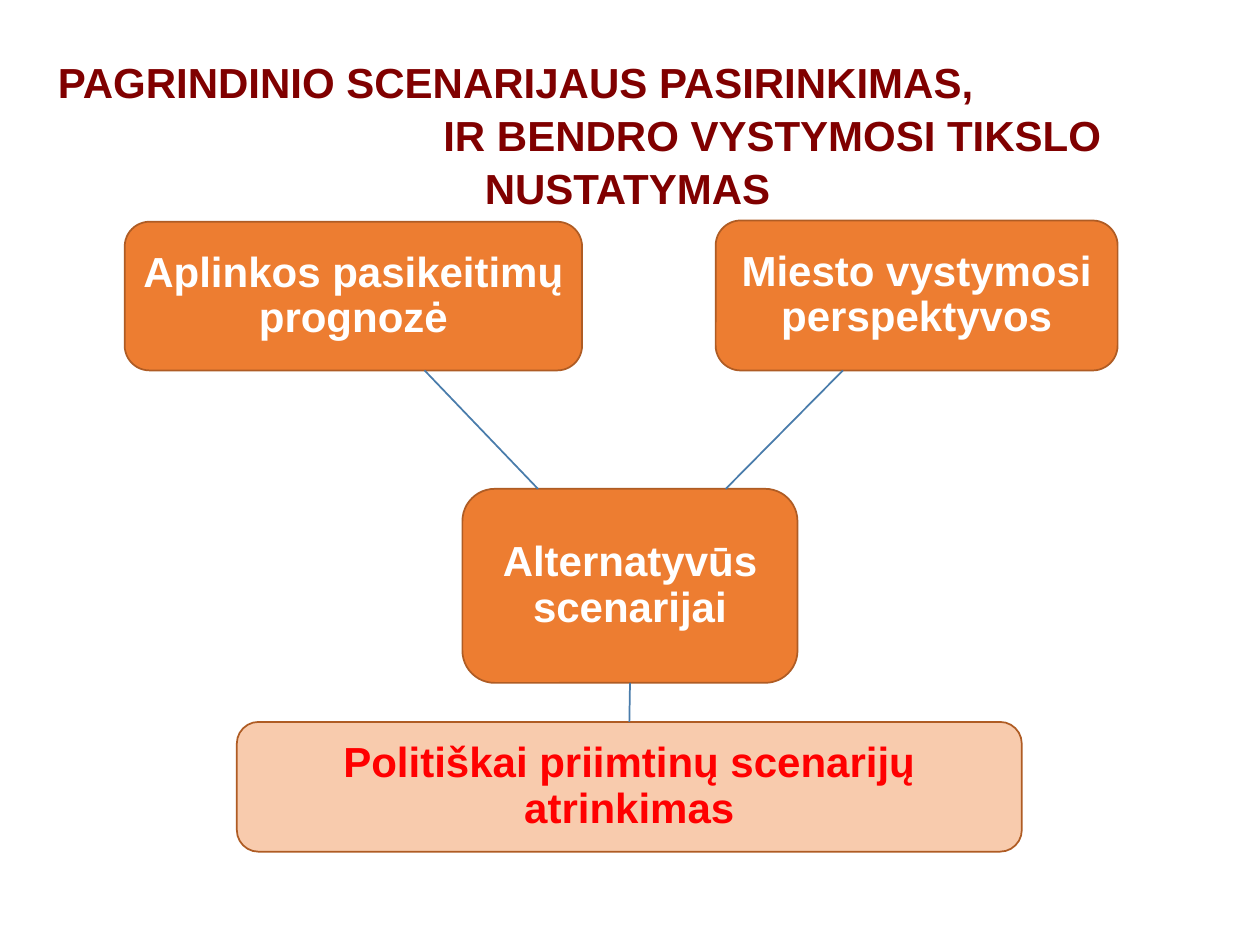
"""Build the slide on choosing the main scenario."""
from dataclasses import dataclass

from lxml import etree
from pptx import Presentation
from pptx import util as u
from pptx.dml.color import RGBColor
from pptx.enum import shapes, text
from pptx.oxml.ns import qn


@dataclass(frozen=True)
class Theme:
    """Colours, type and grid of the slide."""
    font: str = "Arial"
    size: float = 24
    line_width: float = 1
    title: str = "800000"
    step: str = "ED7D31"
    result: str = "F8CBAD"
    border: str = "AF5C24"
    link: str = "497CAB"
    on_step: str = "FFFFFF"
    on_result: str = "FF0000"
    cell: float = 0.1


THEME = Theme()


def grid(*cells):
    """Turn grid columns and rows into lengths."""
    return [u.Inches(cell * THEME.cell) for cell in cells]


def write(paragraph, words, *, color, align=text.PP_ALIGN.CENTER, spacing=0.9, indent=0):
    """Write bold words into a paragraph with the given format."""
    paragraph.alignment = align
    paragraph.line_spacing = spacing
    paragraph.space_before = u.Pt(0)
    if indent:
        paragraph._p.get_or_add_pPr().set("indent", str(grid(indent)[0]))
    run = paragraph.add_run()
    run.text = words
    run.font.name = THEME.font
    run.font.size = u.Pt(THEME.size)
    run.font.bold = True
    run.font.color.rgb = RGBColor.from_string(color)


def add_heading(slide):
    """Place the title, its second part shifted to the right."""
    heading = slide.shapes.title
    heading.left, heading.top, heading.width, heading.height = grid(3.6, 3.8, 92.4, 13)
    frame = heading.text_frame
    frame.word_wrap = True
    frame.auto_size = text.MSO_AUTO_SIZE.NONE
    frame.vertical_anchor = text.MSO_ANCHOR.TOP
    write(frame.paragraphs[0], "PAGRINDINIO SCENARIJAUS PASIRINKIMAS,",
          color=THEME.title, align=text.PP_ALIGN.LEFT, spacing=1.05)
    write(frame.add_paragraph(), "IR BENDRO VYSTYMOSI TIKSLO NUSTATYMAS",
          color=THEME.title, spacing=1.05, indent=23)


def add_stage(slide, words, cells, *, fill=THEME.step, color=THEME.on_step):
    """Add a rounded box with centred words."""
    stage = slide.shapes.add_shape(shapes.MSO_SHAPE.ROUNDED_RECTANGLE, *grid(*cells))
    stage.shadow.inherit = False
    stage.fill.solid()
    stage.fill.fore_color.rgb = RGBColor.from_string(fill)
    stage.line.color.rgb = RGBColor.from_string(THEME.border)
    stage.line.width = u.Pt(THEME.line_width)
    frame = stage.text_frame
    frame.word_wrap = True
    frame.vertical_anchor = text.MSO_ANCHOR.MIDDLE
    frame.margin_left = frame.margin_right = u.Inches(0.07)
    frame.margin_top = frame.margin_bottom = u.Inches(0.07)
    write(frame.paragraphs[0], words, color=color)
    return stage


def add_link(slide, cells=(0, 0, 0, 0)):
    """Add a thin straight line without a shadow."""
    link = slide.shapes.add_connector(shapes.MSO_CONNECTOR.STRAIGHT, *grid(*cells))
    link.line.color.rgb = RGBColor.from_string(THEME.link)
    link.line.width = u.Pt(THEME.line_width)
    etree.SubElement(link._element.spPr, qn("a:effectLst"))
    return link


def main():
    """Build and save the slide."""
    deck = Presentation()
    deck.slide_width, deck.slide_height = grid(100, 75)
    slide = deck.slides.add_slide(deck.slide_layouts.get_by_name("Title Only"))
    add_heading(slide)

    alternatives = add_stage(slide, "Alternatyvūs scenarijai", (36.7, 38.8, 26.6, 15.4))
    add_stage(slide, "Aplinkos pasikeitimų prognozė", (9.9, 17.6, 36.3, 11.8))
    add_stage(slide, "Miesto vystymosi perspektyvos", (56.8, 17.5, 31.9, 11.9))
    selection = add_stage(slide, "Politiškai priimtinų scenarijų atrinkimas",
                          (18.8, 57.3, 62.3, 10.3),
                          fill=THEME.result, color=THEME.on_result)

    for lower, upper in ((42.7, 33.7), (57.6, 66.9)):
        add_link(slide, (lower, 38.8, upper, 29.4))
    choice = add_link(slide)
    choice.begin_connect(alternatives, 2)
    choice.end_connect(selection, 0)

    deck.save("out.pptx")


if __name__ == "__main__":
    main()
